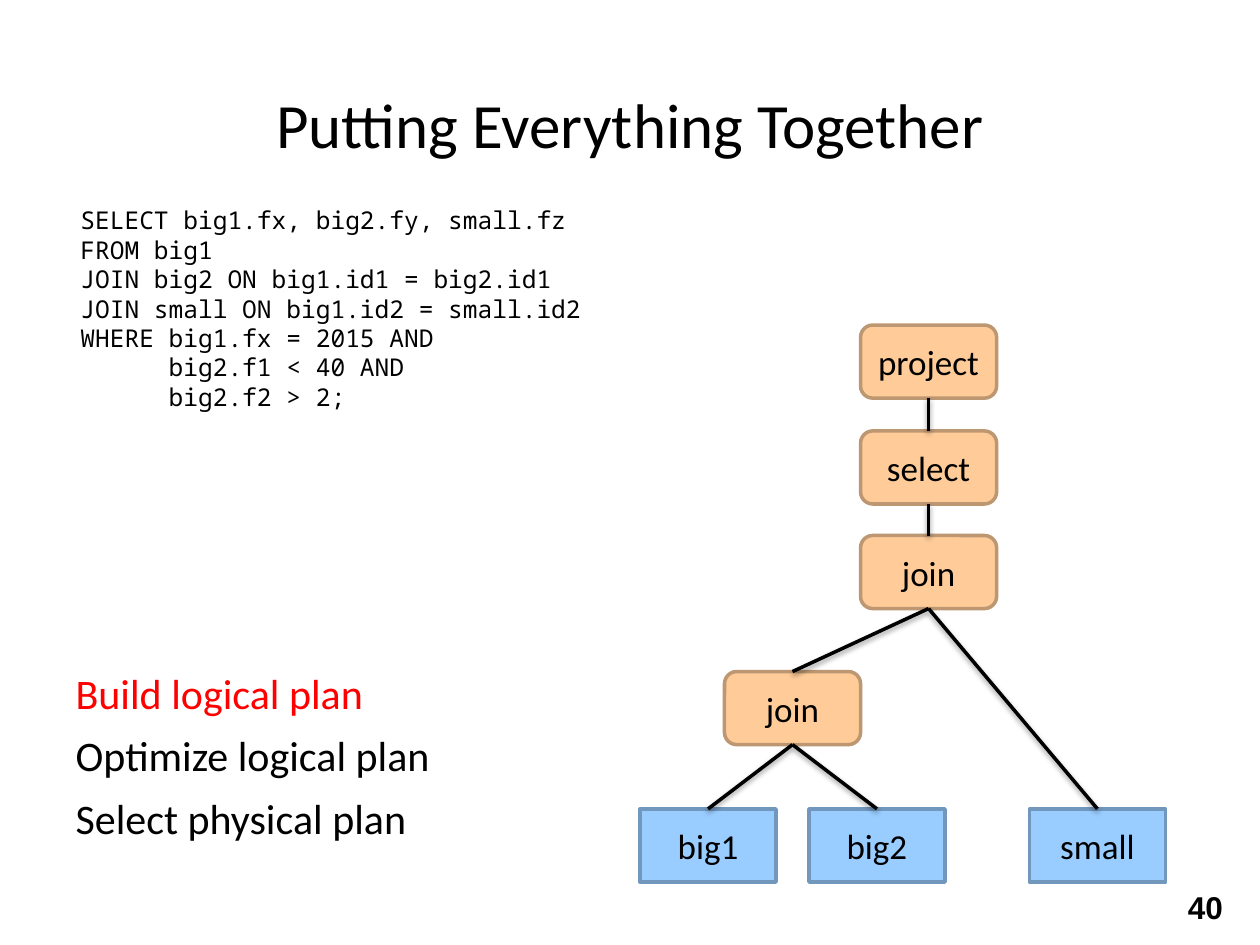
import dataclasses

import lxml.etree
import pptx
import pptx.dml.color
import pptx.enum.shapes
import pptx.enum.text
import pptx.oxml.ns
import pptx.util

Inches, Pt = pptx.util.Inches, pptx.util.Pt
Align, Anchor = pptx.enum.text.PP_ALIGN, pptx.enum.text.MSO_ANCHOR
Kind = pptx.enum.shapes.MSO_SHAPE


@dataclasses.dataclass(frozen=True)
class Theme:
    sans: str = "Calibri"
    mono: str = "Noto Sans Mono"
    plain: str = "Arial"
    ink: str = "000000"
    focus: str = "FF0000"
    step: tuple = ("FFCC99", "BD9771")   # fill, outline
    table: tuple = ("99CCFF", "7197BD")
    title: int = 36
    body: int = 24
    node: int = 20
    code: int = 14
    page: int = 18
    line: int = 2


THEME = Theme()
QUERY = [
    "SELECT big1.fx, big2.fy, small.fz",
    "FROM big1",
    "JOIN big2 ON big1.id1 = big2.id1",
    "JOIN small ON big1.id2 = small.id2",
    "WHERE big1.fx = 2015 AND\v      big2.f1 < 40 AND\v      big2.f2 > 2;",
]
STEPS = ["Build logical plan", "Optimize logical plan", "Select physical plan"]

# Plan nodes: key -> label, x and y inside the plan, is a table
NODES = {
    "project": ("project", 1.75, 0, False),
    "select": ("select", 1.75, 0.84, False),
    "outer": ("join", 1.75, 1.67, False),
    "inner": ("join", 0.67, 2.75, False),
    "big1": ("big1", 0, 3.84, True),
    "big2": ("big2", 1.34, 3.84, True),
    "small": ("small", 3.09, 3.84, True),
}
EDGES = [("project", "select"), ("select", "outer"), ("outer", "inner"),
         ("outer", "small"), ("inner", "big1"), ("inner", "big2")]


def rgb(code):
    return pptx.dml.color.RGBColor.from_string(code)


def place(shape, box):
    shape.left, shape.top, shape.width, shape.height = map(Inches, box)


def write(frame, lines, font, size, align=Align.LEFT, bold=False):
    """Fill a text frame with one paragraph per line."""
    for i, line in enumerate(lines):
        para = frame.paragraphs[0] if i == 0 else frame.add_paragraph()
        para.text = line
        para.alignment = align
        para.font.name, para.font.size = font, Pt(size)
        para.font.bold = bold
        para.font.color.rgb = rgb(THEME.ink)


def add_title(slide, box):
    title = slide.shapes.title
    place(title, box)
    frame = title.text_frame
    frame.auto_size = pptx.enum.text.MSO_AUTO_SIZE.NONE
    frame.vertical_anchor = Anchor.MIDDLE
    write(frame, ["Putting Everything Together"], THEME.sans, THEME.title,
          Align.CENTER)


def add_steps(slide, box):
    body = slide.placeholders[1]
    place(body, box)
    frame = body.text_frame
    frame.auto_size = pptx.enum.text.MSO_AUTO_SIZE.NONE
    write(frame, STEPS, THEME.sans, THEME.body)
    for para in frame.paragraphs:
        para.space_before, para.space_after = Pt(0), Pt(6.7)
        # No bullet, no hanging indent
        props = para._p.get_or_add_pPr()
        props.set("marL", "0")
        props.set("indent", "0")
        lxml.etree.SubElement(props, pptx.oxml.ns.qn("a:buNone"))
    frame.paragraphs[0].font.color.rgb = rgb(THEME.focus)


def add_note(slide, box, lines, font, size, bold=False, wrap=True):
    note = slide.shapes.add_textbox(*map(Inches, box))
    note.text_frame.word_wrap = wrap
    write(note.text_frame, lines, font, size, bold=bold)


def add_node(slide, box, label, table):
    kind = Kind.RECTANGLE if table else Kind.ROUNDED_RECTANGLE
    fill, line = THEME.table if table else THEME.step
    node = slide.shapes.add_shape(kind, *map(Inches, box))
    node.shadow.inherit = False
    node.fill.solid()
    node.fill.fore_color.rgb = rgb(fill)
    node.line.color.rgb = rgb(line)
    node.line.width = Pt(THEME.line)
    frame = node.text_frame
    frame.word_wrap = True
    frame.margin_left = frame.margin_right = Inches(0.05)
    frame.vertical_anchor = Anchor.MIDDLE
    write(frame, [label], THEME.sans, THEME.node, Align.CENTER)
    return node


def add_plan(slide, left, top, wide=1.08, high=0.58):
    nodes = {key: add_node(slide, (left + x, top + y, wide, high), label, table)
             for key, (label, x, y, table) in NODES.items()}
    # Edges run bottom to top and keep the soft theme shadow
    for upper, lower in EDGES:
        edge = slide.shapes.add_connector(
            pptx.enum.shapes.MSO_CONNECTOR.STRAIGHT, 0, 0, 0, 0)
        edge.begin_connect(nodes[lower], 0)
        edge.end_connect(nodes[upper], 2)
        edge.line.color.rgb = rgb(THEME.ink)
        edge.line.width = Pt(THEME.line)


def main():
    deck = pptx.Presentation()
    deck.slide_width, deck.slide_height = Inches(10), Inches(7.5)
    slide = deck.slides.add_slide(deck.slide_layouts[1])
    add_title(slide, (0, 0.6, 10, 0.75))
    add_note(slide, (0.54, 1.58, 4.21, 1.75), QUERY, THEME.mono, THEME.code,
             wrap=False)
    add_steps(slide, (0.5, 5.25, 3.58, 1.5))
    add_plan(slide, 5.08, 2.58)
    # Page number
    add_note(slide, (9.33, 7, 0.58, 0.4), ["40"], THEME.plain, THEME.page,
             bold=True)
    deck.save("out.pptx")


if __name__ == "__main__":
    main()
